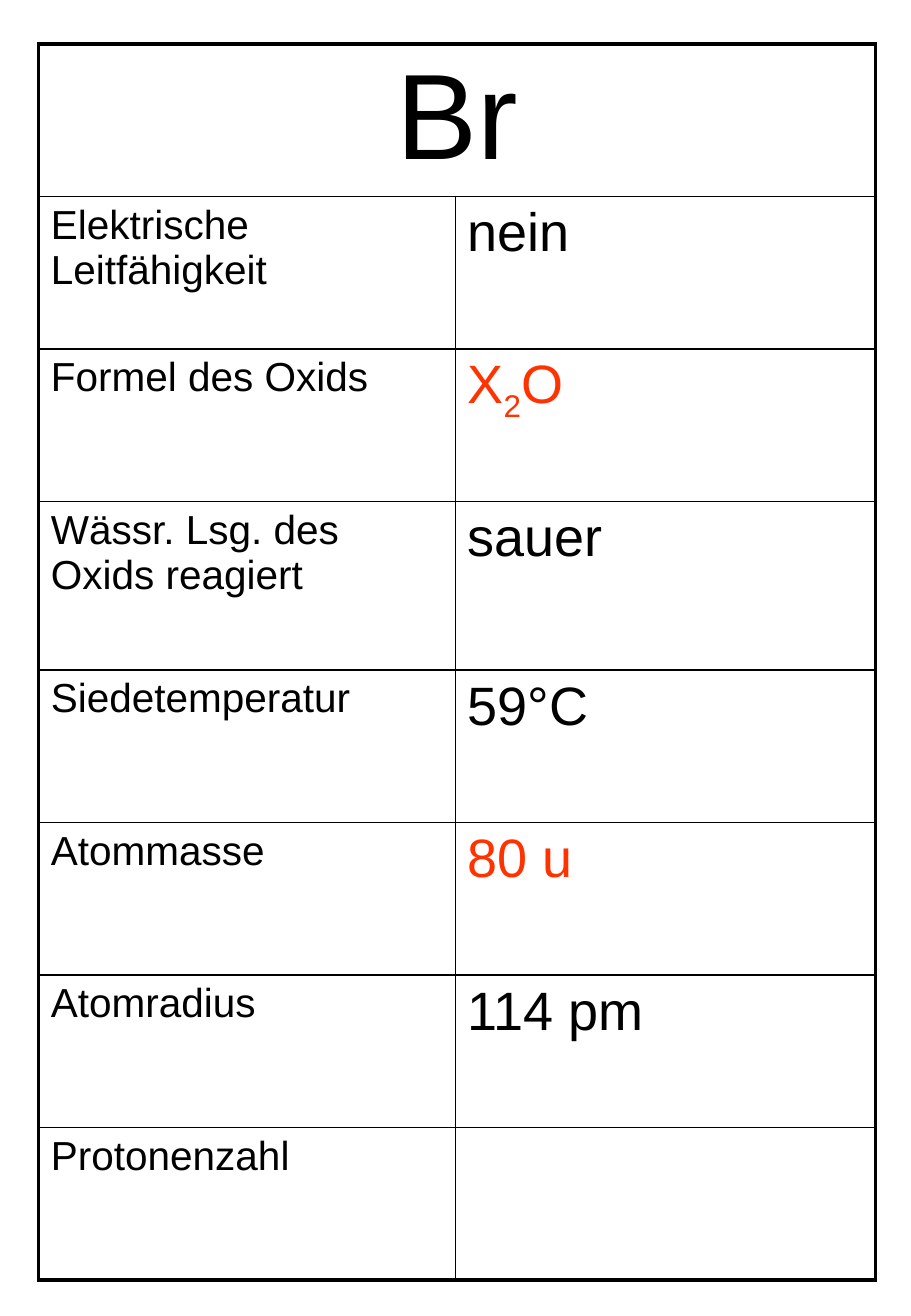
"""Build a one-page property card for the element Br as a bordered table."""
from dataclasses import dataclass

from lxml.etree import SubElement
from pptx import Presentation
from pptx.dml.color import RGBColor as Color
from pptx.enum.text import PP_ALIGN as Align
from pptx.oxml.ns import qn
from pptx.util import Pt


@dataclass(frozen=True)
class Theme:
    font: str = "Arial"
    ink: str = "000000"
    accent: str = "FF3300"
    symbol_size: int = 72
    label_size: int = 24
    value_size: int = 32
    frame: float = 2.25
    rule: float = 1


THEME = Theme()
SUBSCRIPT = "-25000"
PROPERTIES = [
    ("Elektrische Leitfähigkeit", [("nein", None)], THEME.ink),
    ("Formel des Oxids", [("X", None), ("2", SUBSCRIPT), ("O", None)], THEME.accent),
    ("Wässr. Lsg. des Oxids reagiert", [("sauer", None)], THEME.ink),
    ("Siedetemperatur", [("59°C", None)], THEME.ink),
    ("Atommasse", [("80 u", None)], THEME.accent),
    ("Atomradius", [("114 pm", None)], THEME.ink),
    ("Protonenzahl", [], THEME.ink),
]
COLUMN_WIDTHS = [247, 249]
ROW_HEIGHTS = [90.4] * 3 + [100] + [90.4] * 4


def write(cell, spans, size, color, align=Align.LEFT):
    para = cell.text_frame.paragraphs[0]
    para.alignment = align
    spacing = SubElement(para._p.get_or_add_pPr(), qn("a:spcBef"))
    SubElement(spacing, qn("a:spcPct"), val="20000")
    for text, baseline in spans:
        span = para.add_run()
        span.text = text
        for name, value in {"name": THEME.font, "size": Pt(size)}.items():
            setattr(span.font, name, value)
        span.font.color.rgb = Color.from_string(color)
        if baseline:
            span.font._element.set("baseline", baseline)


def draw_borders(cell, outer_sides):
    properties = cell._tc.get_or_add_tcPr()
    for side, is_outer in outer_sides.items():
        width = Pt(THEME.frame if is_outer else THEME.rule)
        line = SubElement(properties, qn(f"a:ln{side}"), w=str(width))
        fill = SubElement(line, qn("a:solidFill"))
        SubElement(fill, qn("a:srgbClr"), val=THEME.ink)
    cell.fill.background()


deck = Presentation()
deck.slide_width, deck.slide_height = Pt(540), Pt(780)
page = deck.slides.add_slide(deck.slide_layouts[6])
frame = page.shapes.add_table(
    len(ROW_HEIGHTS), len(COLUMN_WIDTHS), Pt(23), Pt(26),
    Pt(sum(COLUMN_WIDTHS)), Pt(sum(ROW_HEIGHTS)))
card = frame.table
card.first_row = card.horz_banding = False
for column, width in zip(card.columns, COLUMN_WIDTHS):
    column.width = Pt(width)
for row, height in zip(card.rows, ROW_HEIGHTS):
    row.height = Pt(height)

card.cell(0, 0).merge(card.cell(0, 1))
write(card.cell(0, 0), [("Br", None)], THEME.symbol_size, THEME.ink, Align.CENTER)
for index, (label, value, color) in enumerate(PROPERTIES, start=1):
    write(card.cell(index, 0), [(label, None)], THEME.label_size, THEME.ink)
    write(card.cell(index, 1), value, THEME.value_size, color)

last_row = len(ROW_HEIGHTS) - 1
for row in range(len(ROW_HEIGHTS)):
    for column in range(len(COLUMN_WIDTHS)):
        draw_borders(card.cell(row, column), {
            "L": column == 0,
            "R": column == 1 or row == 0,
            "T": row == 0,
            "B": row == last_row,
        })

deck.save("out.pptx")
